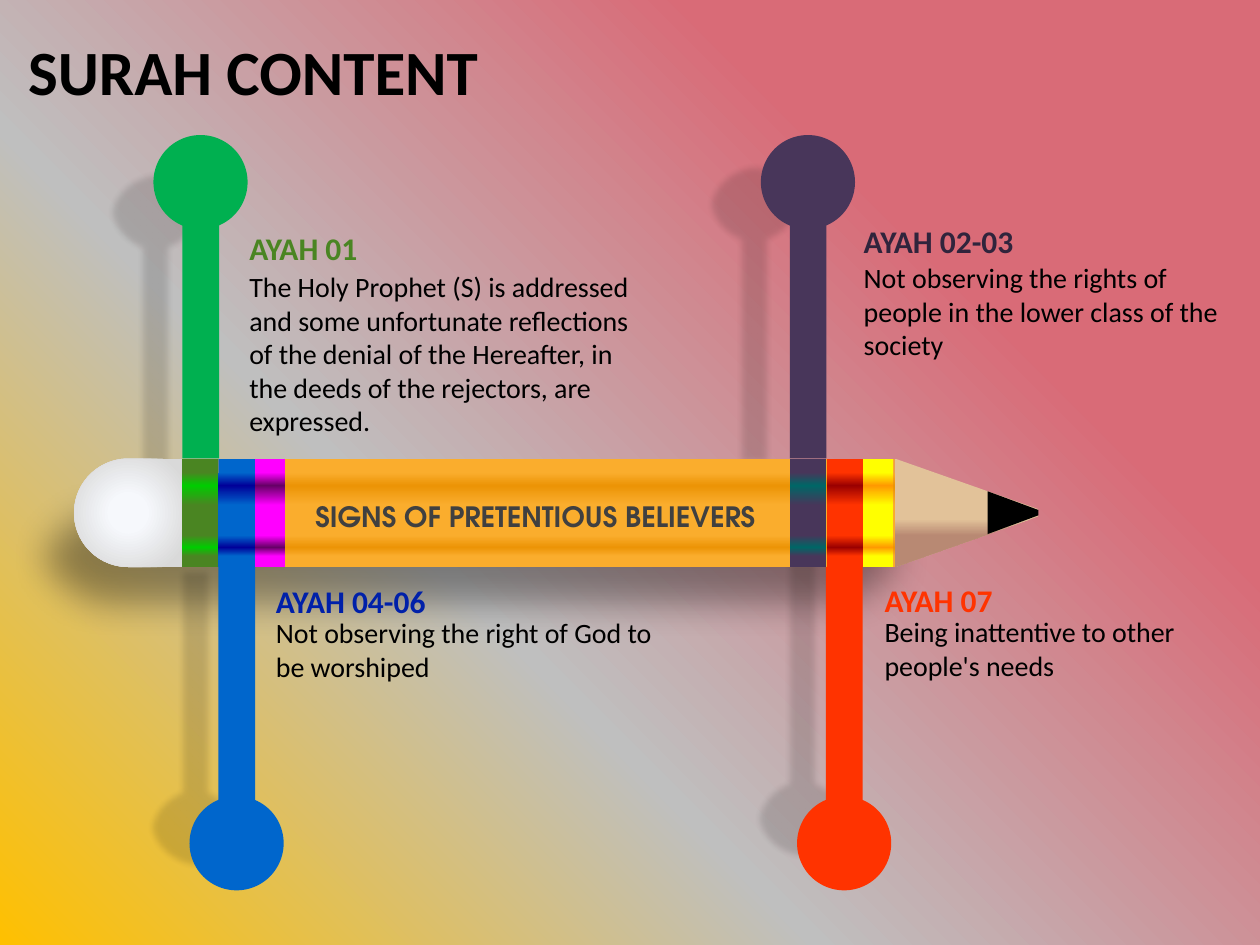
from lxml import etree
from pptx import Presentation
from pptx.dml.color import RGBColor
from pptx.enum import shapes, text
from pptx.oxml.ns import nsdecls, qn
from pptx.util import Pt

KIND = shapes.MSO_SHAPE
COLORS = {
    "black": "000000", "title": "404040",
    "rose": "D96B77", "silver": "BFBFBF", "gold": "FFC000",
    "barrel": "FAAD2D", "barrel dark": "EC9406",
    "eraser": "F6F8FC", "eraser edge": "D9D9D9",
    "wood": "E2C299", "wood dark": "B88973",
    "green": "00B050", "olive": "4A8522", "lime": "00CC00",
    "blue": "0066CC", "navy": "000099", "royal": "0020A9",
    "magenta": "FF00FF", "purple": "660066",
    "violet": "48365A", "teal": "006666", "plum": "30243C",
    "red": "FF3300", "maroon": "9A0000",
    "yellow": "FFFF00", "orange": "FF9900",
}


def finish(shape, color):
    shape.shadow.inherit = False
    shape.line.fill.background()
    shape.fill.solid()
    shape.fill.fore_color.rgb = RGBColor.from_string(COLORS[color])
    return shape


def add_part(slide, kind, box, color, turn=0):
    """Add a preset shape; box is its unrotated left, top, width, height."""
    shape = slide.shapes.add_shape(kind, *map(Pt, box))
    shape.rotation = turn
    return finish(shape, color)


def shade(shape, stops, angle=None):
    """Give a gradient: linear at a clockwise angle, or circular without one."""
    stop_xml = "".join(
        f'<a:gs pos="{at * 1000}"><a:srgbClr val="{COLORS[color]}"/></a:gs>'
        for at, color in stops)
    if angle is None:
        course = ('<a:path path="circle"><a:fillToRect l="50000" t="50000" '
                  'r="50000" b="50000"/></a:path>')
    else:
        course = f'<a:lin ang="{angle * 60000}" scaled="0"/>'
    gradient = etree.fromstring(
        f'<a:gradFill {nsdecls("a")} rotWithShape="1">'
        f'<a:gsLst>{stop_xml}</a:gsLst>{course}</a:gradFill>')
    properties = shape._element.spPr
    properties.replace(properties.find(qn("a:solidFill")), gradient)


def soften(shape, opacity, radius):
    """Make a shape a see-through shadow with soft edges."""
    properties = shape._element.spPr
    tint = properties.find(qn("a:solidFill"))[0]
    etree.SubElement(tint, qn("a:alpha"), val=str(opacity * 1000))
    effects = properties.find(qn("a:effectLst"))
    etree.SubElement(effects, qn("a:softEdge"), rad=str(int(Pt(radius))))


def add_text(slide, box, words, size, color, font="Calibri", bold=False,
             align=text.PP_ALIGN.LEFT, wrap=True):
    frame = slide.shapes.add_textbox(*map(Pt, box)).text_frame
    frame.word_wrap = wrap
    frame.auto_size = text.MSO_AUTO_SIZE.SHAPE_TO_FIT_TEXT
    line = frame.paragraphs[0]
    line.text = words
    line.alignment = align
    line.font.name, line.font.size, line.font.bold = font, Pt(size), bold
    line.font.color.rgb = RGBColor.from_string(COLORS[color])


def curve_segments(shape, first):
    """Turn each three straight segments from the given one on into a curve."""
    segments = list(shape._element.iter(qn("a:lnTo")))[first:]
    for start, *others in zip(segments[::3], segments[1::3], segments[2::3]):
        curve = etree.Element(qn("a:cubicBezTo"))
        start.addprevious(curve)
        for segment in (start, *others):
            curve.append(segment[0])
            segment.getparent().remove(segment)


def add_pin_shadow(slide, box, upward):
    left, top, width, height = box
    stem = [(17.5, height), (39.5, height), (39.5, 49), (44.5, 46.5)]
    head = [(52, 42), (width, 34), (width, 25),
            (width, 11), (44, 0), (width / 2, 0),
            (13, 0), (0, 11), (0, 25),
            (0, 36), (7, 45), (17.5, 49)]
    points = [(Pt(left + x), Pt(top + (y if upward else height - y)))
              for x, y in stem + head]
    builder = slide.shapes.build_freeform(*points[0], scale=1)
    builder.add_line_segments(points[1:], close=True)
    shadow = finish(builder.convert_to_shape(), "black")
    curve_segments(shadow, len(stem) - 1)
    soften(shadow, 14, 4)


def add_pin(slide, box, color, upward):
    left, top, ball, height = box
    stem = 144
    stem_top, ball_top = ((top + height - stem, top) if upward
                          else (top, top + height - ball))
    add_part(slide, KIND.RECTANGLE, (left + 16.5, stem_top, 21, stem), color)
    add_part(slide, KIND.OVAL, (left, ball_top, ball, ball), color)


def add_striped(slide, box, color, dark):
    stripe = add_part(slide, KIND.RECTANGLE, box, color)
    shade(stripe, [(13, color), (25, dark), (43, color),
                   (71, color), (82, dark), (90, color)], 90)


def add_trapezoid(slide, right, middle, length, width, slope, color):
    """Add a trapezoid that narrows towards its right end."""
    box = (right - (length + width) / 2, middle - length / 2, width, length)
    shape = add_part(slide, KIND.TRAPEZOID, box, color, 90)
    shape.adjustments[0] = slope
    return shape


def add_pencil(slide, box):
    left, top, width, height = box
    shadow = add_part(slide, KIND.ROUNDED_RECTANGLE,
                      (left - 42.5, top + 8.7, 538, 94), "black")
    shadow.adjustments[0] = 0.5
    soften(shadow, 36, 21)

    tip = 82
    add_striped(slide, (left + height, top, width - height - tip, height),
                "barrel", "barrel dark")
    eraser = add_part(slide, KIND.ROUND_2_SAME_RECTANGLE,
                      (left, top, height, height), "eraser", 270)
    eraser.adjustments[0] = 0.5
    shade(eraser, [(24, "eraser"), (87, "eraser edge")])

    right, middle = left + width, top + height / 2
    wood = add_trapezoid(slide, right, middle, tip, height, 0.466, "wood")
    shade(wood, [(0, "wood"), (56, "wood"), (71, "wood dark")], 0)
    add_trapezoid(slide, right, middle, 29, 24.5, 0.437, "black")

    rings = [
        (61.5, [("olive", "lime"), ("blue", "navy"), ("magenta", "purple")]),
        (409, [("violet", "teal"), ("red", "maroon"), ("yellow", "orange")]),
    ]
    for start, pairs in rings:
        x = left + start
        for ring_width, pair in zip((21, 21, 17), pairs):
            add_striped(slide, (x, top, ring_width, height), *pair)
            x += ring_width


def add_note(slide, box, heading, color, gap, body):
    left, top, width, height = box
    add_text(slide, (left, top, width, 29), heading, 18, color, bold=True)
    add_text(slide, (left, top + gap, width, height - gap), body, 16, "black")


def main():
    deck = Presentation()
    deck.slide_width, deck.slide_height = Pt(720), Pt(540)
    slide = deck.slides.add_slide(deck.slide_layouts[6])

    backdrop = add_part(slide, KIND.RECTANGLE, (0, 0, 720, 540), "rose")
    shade(backdrop, [(26, "rose"), (63, "silver"), (100, "gold")], 135)
    add_text(slide, (9, 15, 274, 51), "SURAH CONTENT", 36, "black",
             bold=True, wrap=False)

    pencil_top, pencil_height = 262, 62
    pencil_bottom = pencil_top + pencil_height
    for left, top, upward in [(60.5, 96.5, True), (402.5, 92, True),
                              (83, 323, False), (430, 318, False)]:
        add_pin_shadow(slide, (left, top, 57, 175), upward)
    add_pencil(slide, (42.3, pencil_top, 551, pencil_height))

    pin_height = 184.8
    for left, color, upward in [(455.5, "red", False), (434.8, "violet", True),
                                (108.3, "blue", False), (87.7, "green", True)]:
        top = pencil_top - pin_height if upward else pencil_bottom
        add_pin(slide, (left, top, 53.8, pin_height), color, upward)

    add_text(slide, (161, 282, 290, 27), "SIGNS OF PRETENTIOUS BELIEVERS", 16,
             "title", "TeX Gyre Adventor", True, text.PP_ALIGN.CENTER)
    add_note(slide, (135.4, 127.5, 232.5, 127.5), "AYAH 01", "olive", 23,
             "The Holy Prophet (S) is addressed and some unfortunate "
             "reflections of the denial of the Hereafter, in the deeds of "
             "the rejectors, are expressed.")
    add_note(slide, (486.5, 123.2, 232.5, 88), "AYAH 02-03", "plum", 22.2,
             "Not observing the rights of people in the lower class of the "
             "society")
    add_note(slide, (150.6, 329.2, 232.5, 65.5), "AYAH 04-06", "royal", 19.3,
             "Not observing the right of God to be worshiped")
    add_note(slide, (498.4, 328.3, 232.5, 65.5), "AYAH 07", "red", 19.3,
             "Being inattentive to other people's needs")
    deck.save("out.pptx")


if __name__ == "__main__":
    main()
